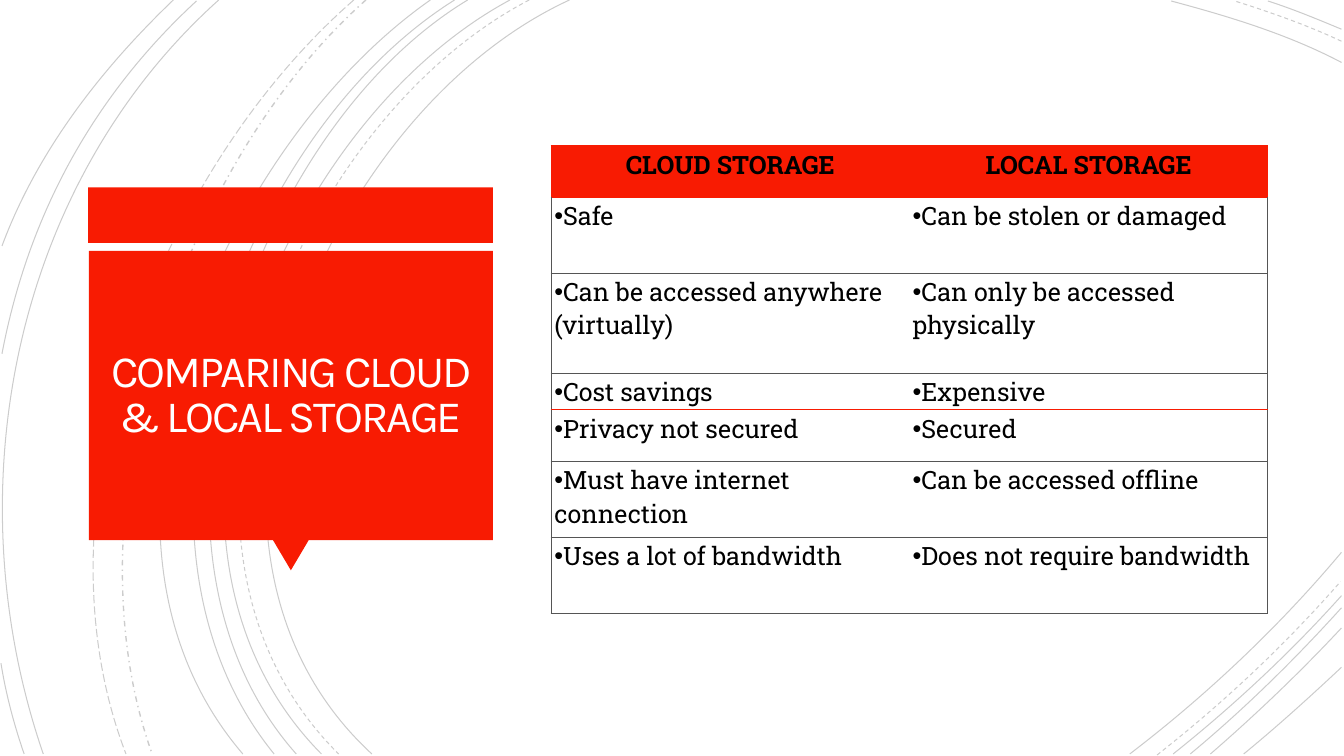
from dataclasses import dataclass
from typing import NamedTuple, Optional

from lxml import etree
from pptx import Presentation
from pptx import util as u
from pptx.dml.color import RGBColor
from pptx.enum import dml, shapes, text
from pptx.oxml.ns import qn


@dataclass(frozen=True)
class Theme:
    accent: str = "F81B02"
    ink: str = "000000"
    paper: str = "FFFFFF"
    rule: str = "555555"
    title_font: str = "Karla"
    body_font: str = "Roboto Slab"
    bullet_font: str = "Arial"
    title_size: float = 32
    body_size: float = 18
    rule_width: float = 0.75
    arc_opacity: int = 20


class Arc(NamedTuple):
    """A cubic curve: start, two handles and end, in units of 2.54 cm."""
    points: tuple
    dash: Optional[dml.MSO_LINE] = None
    width: float = 0.75


class Panel(NamedTuple):
    kind: shapes.MSO_SHAPE
    left: float
    top: float
    width: float
    height: float
    rotation: float = 0


class Row(NamedTuple):
    height: float
    cloud: str
    local: str


THEME = Theme()
DASH = dml.MSO_LINE.DASH
ARC_UNIT = 2.54

ARCS = [
    Arc(((5.65, 0), (3.15, 1.15), (1.43, 5.4), (3.69, 7.48))),
    Arc(((13.31, 0.62), (12.78, 0.34), (12.18, 0.16), (11.62, 0.01))),
    Arc(((11.21, 7.48), (11.97, 6.9), (12.69, 6.22), (13.31, 5.48))),
    Arc(((5.25, 0), (2.85, 1.25), (1.23, 5.37), (3.36, 7.48)), DASH),
    Arc(((13.31, 0.41), (12.97, 0.25), (12.6, 0.12), (12.25, 0.01)), DASH),
    Arc(((11.48, 7.49), (12.13, 6.98), (12.75, 6.4), (13.3, 5.77)), DASH),
    Arc(((5.06, 0), (2.7, 1.27), (1.1, 5.37), (3.19, 7.48))),
    Arc(((13.31, 0.29), (13.07, 0.19), (12.83, 0.09), (12.58, 0.01))),
    Arc(((11.64, 7.48), (12.23, 7.01), (12.8, 6.48), (13.31, 5.91))),
    Arc(((4.64, 0), (2.44, 1.33), (1.1, 5.41), (2.94, 7.48))),
    Arc(((11.81, 7.48), (12.34, 7.04), (12.84, 6.55), (13.31, 6.03))),
    Arc(((4.51, 0), (2.31, 1.38), (0.97, 5.33), (2.72, 7.48))),
    Arc(((12.01, 7.48), (12.46, 7.09), (12.9, 6.67), (13.31, 6.23))),
    Arc(((4.27, 0), (2.17, 1.47), (0.53, 5.29), (2.41, 7.48))),
    Arc(((12.34, 7.48), (12.67, 7.21), (12.99, 6.92), (13.31, 6.62))),
    Arc(((3.63, 0), (1.76, 1.66), (0.65, 5.09), (1.51, 7.48)), dml.MSO_LINE.DASH_DOT, 1),
    Arc(((3.51, 0), (1.57, 1.69), (0.29, 4.99), (1.25, 7.48)), dml.MSO_LINE.LONG_DASH),
    Arc(((2.17, 0), (0.11, 1.85), (-0.46, 4.9), (0.43, 7.48))),
    Arc(((1.95, 0.01), (0.92, 0.96), (0.28, 2.14), (0.02, 3.51))),
    Arc(((0.01, 6.58), (0.06, 6.89), (0.14, 7.19), (0.24, 7.48))),
    Arc(((1.72, 0), (1, 0.69), (0.37, 1.5), (0.02, 2.44))),
]

PANELS = [
    Panel(shapes.MSO_SHAPE.RECTANGLE, 2.22, 4.72, 10.2, 1.4),
    Panel(shapes.MSO_SHAPE.ISOSCELES_TRIANGLE, 6.88, 13.61, 0.9, 0.76, 180),
    Panel(shapes.MSO_SHAPE.RECTANGLE, 2.24, 6.32, 10.18, 7.29),
]

ROWS = [
    Row(1.3, "CLOUD STORAGE", "LOCAL STORAGE"),
    Row(1.91, "Safe", "Can be stolen or damaged"),
    Row(2.52, "Can be accessed anywhere (virtually)", "Can only be accessed physically"),
    Row(0.93, "Cost savings", "Expensive"),
    Row(1.3, "Privacy not secured", "Secured"),
    Row(1.91, "Must have internet connection", "Can be accessed offline"),
    Row(1.91, "Uses a lot of bandwidth", "Does not require bandwidth"),
]
COLUMN_WIDTH = 9.03
ACCENT_RULES = (0, 1, 4)


def write_text(frame, content: str, *, font: str, size: float, color: str,
               bold: bool = False, centred: bool = False, line_spacing: float = 1,
               tracking: float = 0, bullet: str = "") -> None:
    paragraph = frame.paragraphs[0]
    paragraph.alignment = text.PP_ALIGN.CENTER if centred else text.PP_ALIGN.LEFT
    paragraph.line_spacing = line_spacing
    if bullet:
        properties = paragraph._p.get_or_add_pPr()
        properties.set("marL", "0")
        properties.set("indent", "0")
        etree.SubElement(properties, qn("a:buFont")).set("typeface", THEME.bullet_font)
        etree.SubElement(properties, qn("a:buChar")).set("char", bullet)
    run = paragraph.add_run()
    run.text = content
    run.font.name = font
    run.font.size = u.Pt(size)
    run.font.bold = bold
    run.font.color.rgb = RGBColor.from_string(color)
    if tracking:
        run._r.get_or_add_rPr().set("spc", str(round(tracking * 100)))


def draw_arc(slide, arc: Arc) -> None:
    start, *rest = [(u.Cm(ARC_UNIT * x), u.Cm(ARC_UNIT * y)) for x, y in arc.points]
    builder = slide.shapes.build_freeform(*start)
    builder.add_line_segments(rest, close=False)
    shape = builder.convert_to_shape()
    bend_segments(shape)
    shape.shadow.inherit = False
    shape.fill.background()
    shape.line.width = u.Pt(arc.width)
    shape.line.color.rgb = RGBColor.from_string(THEME.ink)
    if arc.dash is not None:
        shape.line.dash_style = arc.dash
    color = shape._element.spPr.find(".//" + qn("a:srgbClr"))
    etree.SubElement(color, qn("a:alpha")).set("val", str(THEME.arc_opacity * 1000))


def bend_segments(shape) -> None:
    """Join the three straight segments of a freeform into one cubic curve."""
    segments = shape._element.spPr.findall(".//" + qn("a:lnTo"))
    outline = segments[0].getparent()
    curve = etree.SubElement(outline, qn("a:cubicBezTo"))
    for segment in segments:
        curve.append(segment[0])
        outline.remove(segment)


def draw_panel(slide, panel: Panel) -> None:
    box = map(u.Cm, (panel.left, panel.top, panel.width, panel.height))
    shape = slide.shapes.add_shape(panel.kind, *box)
    shape.rotation = panel.rotation
    shape.shadow.inherit = False
    shape.fill.solid()
    shape.fill.fore_color.rgb = RGBColor.from_string(THEME.accent)
    shape.line.fill.background()


def draw_title(slide) -> None:
    frame = slide.shapes.add_textbox(u.Cm(2.46), u.Cm(6.57), u.Cm(9.73), u.Cm(6.83)).text_frame
    frame.word_wrap = True
    frame.vertical_anchor = text.MSO_ANCHOR.MIDDLE
    frame.margin_left = frame.margin_right = u.Cm(0.25)
    frame.margin_top = frame.margin_bottom = u.Cm(0.25)
    write_text(frame, "COMPARING CLOUD & LOCAL STORAGE", font=THEME.title_font,
               size=THEME.title_size, color=THEME.paper, centred=True,
               line_spacing=0.85, tracking=-1.5)


def set_border(cell, side: str, color: Optional[str]) -> None:
    """Rule one side (L, R, T or B) of a cell, or clear it when color is None."""
    line = etree.SubElement(cell._tc.get_or_add_tcPr(), qn(f"a:ln{side}"))
    line.set("w", str(u.Pt(THEME.rule_width)))
    if color is None:
        etree.SubElement(line, qn("a:noFill"))
    else:
        fill = etree.SubElement(line, qn("a:solidFill"))
        etree.SubElement(fill, qn("a:srgbClr")).set("val", color)


def rule_color(index: int) -> str:
    return THEME.accent if index in ACCENT_RULES else THEME.rule


def fill_cell(cell, content: str, row: int, column: int) -> None:
    header = row == 0
    edge = THEME.accent if header else THEME.rule
    set_border(cell, "L", edge if column == 0 else None)
    set_border(cell, "R", edge if column == 1 else None)
    set_border(cell, "T", rule_color(row))
    set_border(cell, "B", rule_color(row + 1))
    if header:
        cell.fill.solid()
        cell.fill.fore_color.rgb = RGBColor.from_string(THEME.accent)
    else:
        cell.fill.background()
    cell.margin_left = cell.margin_right = u.Cm(0.08)
    cell.margin_top = cell.margin_bottom = u.Cm(0.05)
    write_text(cell.text_frame, content, font=THEME.body_font, size=THEME.body_size,
               color=THEME.ink, bold=header, centred=header, bullet="" if header else "•")


def draw_comparison(slide) -> None:
    height = sum(row.height for row in ROWS)
    table = slide.shapes.add_table(len(ROWS), 2, u.Cm(13.89), u.Cm(3.67),
                                   u.Cm(2 * COLUMN_WIDTH), u.Cm(height)).table
    table.horz_banding = False
    for column in table.columns:
        column.width = u.Cm(COLUMN_WIDTH)
    for index, row in enumerate(ROWS):
        table.rows[index].height = u.Cm(row.height)
        for column, content in enumerate((row.cloud, row.local)):
            fill_cell(table.cell(index, column), content, index, column)


def main() -> None:
    presentation = Presentation()
    presentation.slide_width = u.Cm(33.87)
    presentation.slide_height = u.Cm(19.05)
    slide = presentation.slides.add_slide(presentation.slide_layouts[6])
    for arc in ARCS:
        draw_arc(slide, arc)
    for panel in PANELS:
        draw_panel(slide, panel)
    draw_title(slide)
    draw_comparison(slide)
    presentation.save("out.pptx")


if __name__ == "__main__":
    main()
